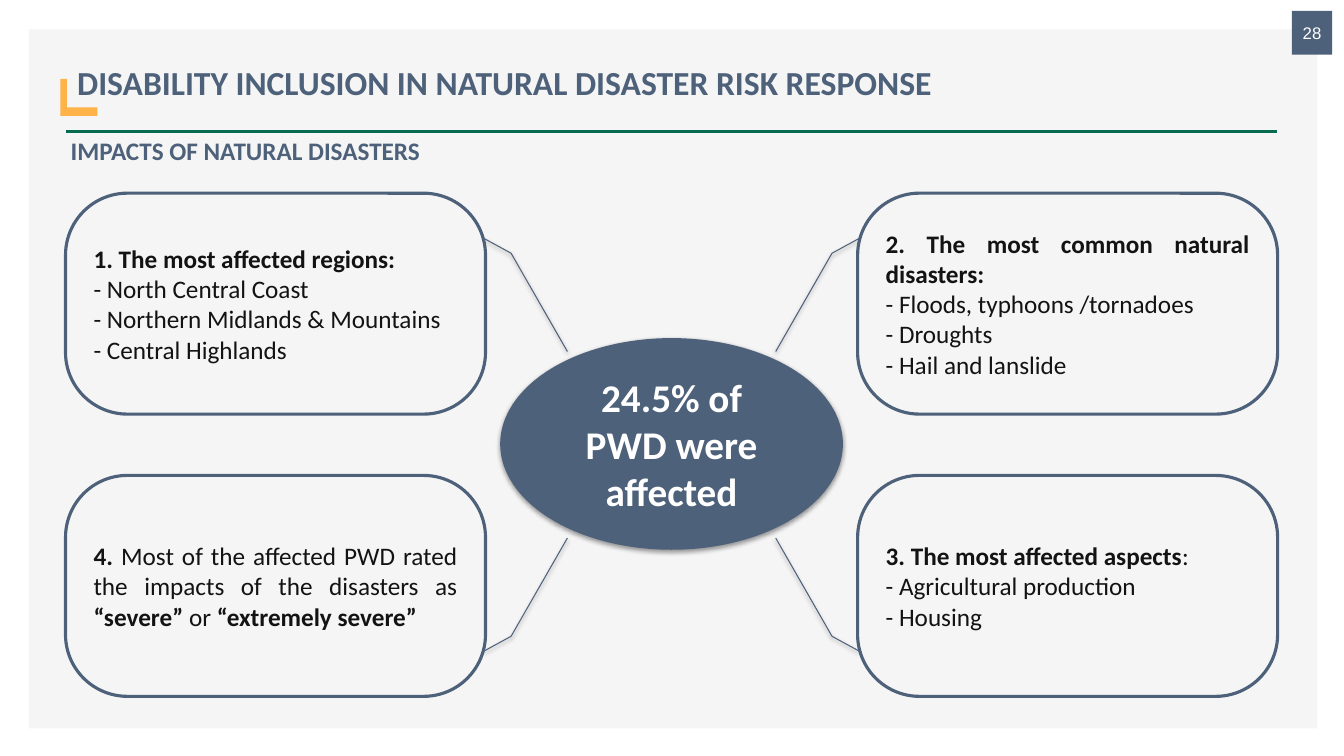
import lxml.etree
import pptx
import pptx.dml.color
import pptx.enum.shapes
import pptx.enum.text
import pptx.oxml.ns
import pptx.util

SHAPE = pptx.enum.shapes.MSO_SHAPE
ALIGN = pptx.enum.text.PP_ALIGN
ANCHOR = pptx.enum.text.MSO_ANCHOR
COLORS = {"slate": "4E617A", "panel": "F5F5F5", "green": "076B51", "amber": "FDB347",
          "ink": "131313", "white": "FFFFFF", "shadow": "000000"}
COLUMNS, ROWS = 160, 90
CELL = pptx.util.Inches(7.5) / ROWS

# Each card is a list of paragraphs, each paragraph a list of (text, bold) runs
REGIONS = [[("1. The most affected regions:", True)],
           [("- North Central Coast", False)],
           [("- Northern Midlands & Mountains", False)],
           [("- Central Highlands", False)]]
DISASTERS = [[("2. The most common natural disasters:", True)],
             [("- Floods, typhoons /tornadoes", False)],
             [("- Droughts", False)],
             [("- Hail and lanslide", False)]]
ASPECTS = [[("3. The most affected aspects", True), (":", False)],
           [("- Agricultural production", False)],
           [("- Housing", False)]]
SEVERITY = [[("4. ", True),
             ("Most of the affected PWD rated the impacts of the disasters as ", False),
             ("“severe” ", True), ("or", False), (" “extremely severe”", True)]]


def cells(*counts):
    return [round(count * CELL) for count in counts]


def color(name):
    return pptx.dml.color.RGBColor.from_string(COLORS[name])


def add_block(slide, box, fill=None, outline=None, preset=SHAPE.RECTANGLE):
    block = slide.shapes.add_shape(preset, *cells(*box))
    block.shadow.inherit = False
    if fill:
        block.fill.solid()
        block.fill.fore_color.rgb = color(fill)
    else:
        block.fill.background()
    if outline:
        block.line.color.rgb = color(outline)
        block.line.width = pptx.util.Pt(2.25)
    else:
        block.line.fill.background()
    return block


def add_line(slide, start, end, ink, width):
    line = slide.shapes.add_connector(pptx.enum.shapes.MSO_CONNECTOR.STRAIGHT,
                                      *cells(*start, *end))
    line.line.color.rgb = color(ink)
    line.line.width = pptx.util.Pt(width)
    lxml.etree.SubElement(line.element.spPr, pptx.oxml.ns.qn("a:effectLst"))
    return line


def cast_shadow(part):
    qn = pptx.oxml.ns.qn
    effects = part.element.spPr.find(qn("a:effectLst"))
    outer = lxml.etree.SubElement(effects, qn("a:outerShdw"), blurRad="40000", dist="20000",
                                  dir="5400000", rotWithShape="0")
    tone = lxml.etree.SubElement(outer, qn("a:srgbClr"), val=COLORS["shadow"])
    lxml.etree.SubElement(tone, qn("a:alpha"), val="38000")


def write(holder, paragraphs, size, ink, align, anchor=ANCHOR.MIDDLE, font="Calibri", spacing=None):
    frame = holder.text_frame
    frame.word_wrap = True
    frame.vertical_anchor = anchor
    for index, runs in enumerate(paragraphs):
        paragraph = frame.add_paragraph() if index else frame.paragraphs[0]
        paragraph.alignment = align
        if spacing:
            paragraph.line_spacing = spacing
        for text, bold in runs:
            run = paragraph.add_run()
            run.text = text
            run.font.name = font
            run.font.size = pptx.util.Pt(size)
            run.font.bold = bold
            run.font.color.rgb = color(ink)


def add_backdrop(slide, box):
    left, top, width, height = box
    add_block(slide, box, "panel")
    add_line(slide, (left + 4.5, top + 12.2), (left + 148.6, top + 12.2), "green", 2)
    page_badge = add_block(slide, (left + 150.4, top - 2.2, 4.8, 5.2), "slate")
    write(page_badge, [[("28", False)]], 12, "white", ALIGN.CENTER, font="Arial")


def add_header(slide, box):
    left, top, width, height = box
    # The heading band covers the amber square so that only its corner shows
    add_block(slide, (left, top + 5.1, 4.4, 4.4), "amber")
    heading = add_block(slide, (left + 0.8, top, width - 0.8, 8.5), "panel")
    write(heading, [[("DISABILITY INCLUSION IN NATURAL DISASTER RISK RESPONSE", True)]],
          24, "slate", ALIGN.LEFT, spacing=1.5)
    # Section title, brought in front of the backdrop
    title = slide.shapes.title
    title.element.getparent().append(title.element)
    title.left, title.top, title.width, title.height = cells(left, top + 11.2, 74, 4.8)
    write(title, [[("IMPACTS OF NATURAL DISASTERS", True)]], 18, "slate", ALIGN.LEFT, ANCHOR.TOP)


def add_impact_map(slide, box):
    left, top, width, height = box
    center_x, center_y = left + width / 2, top + height / 2
    card_width, card_height = 50, 26.3

    # Central figure
    hub = add_block(slide, (center_x - 20.4, center_y - 12.7, 40.8, 25.2), "slate",
                    preset=SHAPE.FLOWCHART_CONNECTOR)
    cast_shadow(hub)
    write(hub, [[("24.5% of PWD were affected", True)]], 28, "white", ALIGN.CENTER)

    # Four corners, clockwise: a bent leader and its card
    corners = [(-1, -1, REGIONS), (1, -1, DISASTERS), (1, 1, ASPECTS), (-1, 1, SEVERITY)]
    for side, level, paragraphs in corners:
        near_hub, bend, near_card = [
            (center_x + side * dx, center_y + level * dy)
            for dx, dy in ((12.4, 11.1), (19.1, 22.8), (22.4, 24.6))]
        for end in (near_hub, near_card):
            cast_shadow(add_line(slide, bend, end, "slate", 0.75))
        card_left = left if side < 0 else left + width - card_width
        card_top = top if level < 0 else top + height - card_height
        card = add_block(slide, (card_left, card_top, card_width, card_height),
                         outline="slate", preset=SHAPE.ROUNDED_RECTANGLE)
        card.adjustments[0] = 0.28
        write(card, paragraphs, 18, "ink", ALIGN.JUSTIFY)


def main():
    deck = pptx.Presentation()
    deck.slide_width, deck.slide_height = cells(COLUMNS, ROWS)
    slide = deck.slides.add_slide(deck.slide_layouts.get_by_name("Title Only"))
    add_backdrop(slide, (3.4, 3.5, 153.4, 83.2))
    add_header(slide, (7.2, 4.3, 145.6, 16))
    add_impact_map(slide, (7.8, 23, 144.3, 59.9))
    deck.save("out.pptx")


if __name__ == "__main__":
    main()
